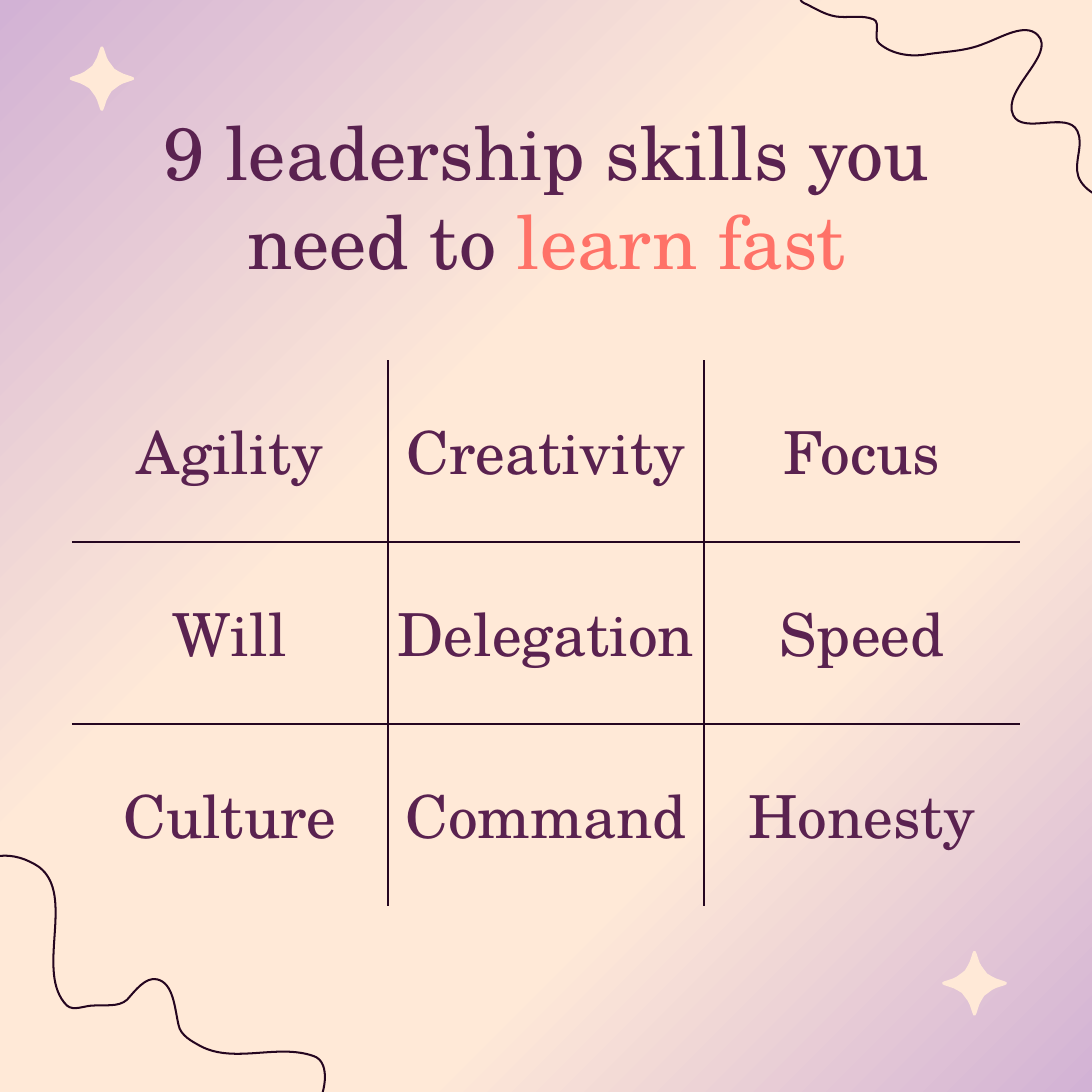
"""Build a square slide with a grid of nine leadership skills."""
from lxml import etree
from pptx import Presentation, util as u
from pptx.dml.color import RGBColor
from pptx.enum import shapes, text
from pptx.oxml import ns

SIDE = 11.25
FONT = "TeX Gyre Schola"
HUES = {"cream": "FFE9D7", "lilac": "D2B2D5", "plum": "5A2250",
        "coral": "FF7268", "ink": "250620"}
FADE = [(0, "lilac"), (31, "cream"), (50, "cream"), (61, "cream"), (100, "lilac")]
TITLE = [("9 leadership skills you need to ", "plum"), ("learn fast", "coral")]
SKILLS = [["Agility", "Creativity", "Focus"],
          ["Will", "Delegation", "Speed"],
          ["Culture", "Command", "Honesty"]]
GRID = {"left": 0.74, "top": 3.71, "width": 9.77, "height": 5.62}
WAVES = [
    [(3.23, 11.46), (3.35, 11.3), (3.42, 10.94), (3.23, 10.88),
     (2.86, 10.75), (2.42, 10.96), (2.07, 10.78),
     (1.98, 10.73), (1.86, 10.67), (1.84, 10.56),
     (1.8, 10.39), (1.79, 10.13), (1.62, 10.09),
     (1.5, 10.06), (1.39, 10.21), (1.31, 10.3),
     (1.22, 10.38), (1.08, 10.35), (0.96, 10.36),
     (0.87, 10.36), (0.76, 10.42), (0.69, 10.36),
     (0.35, 10.02), (0.79, 9.22), (0.4, 8.93),
     (0.28, 8.85), (0.13, 8.8), (-0.01, 8.82),
     (-0.28, 8.88), (-0.43, 9.19), (-0.62, 9.39)],
    [(11.55, 2.07), (11.38, 2.07), (11.17, 1.98), (11.11, 1.82),
     (11.06, 1.67), (11.17, 1.49), (11.1, 1.35),
     (11, 1.14), (10.54, 1.39), (10.44, 1.19),
     (10.31, 0.93), (10.89, 0.56), (10.69, 0.36),
     (10.56, 0.23), (10.31, 0.39), (10.14, 0.45),
     (9.95, 0.53), (9.74, 0.53), (9.55, 0.56),
     (9.38, 0.59), (9.19, 0.56), (9.06, 0.45),
     (8.99, 0.4), (9.08, 0.23), (9, 0.2),
     (8.88, 0.15), (8.73, 0.19), (8.61, 0.17),
     (8.49, 0.15), (8.39, 0.08), (8.28, 0.03),
     (8.21, 0), (8.26, -0.11), (8.26, -0.17)],
]
STARS = [(10.04, 10.13), (1.05, 0.81)]
ARM = [(0.01, 0.33), (0.02, 0.31), (0.05, 0.22), (0.07, 0.18), (0.1, 0.14),
       (0.13, 0.1), (0.18, 0.07), (0.22, 0.05), (0.31, 0.02), (0.33, 0.01)]


def paint(fill, hue):
    fill.solid()
    fill.fore_color.rgb = RGBColor.from_string(HUES[hue])


def node(up, tag, **attrs):
    return etree.SubElement(up, ns.qn(tag), attrs)


def tint(up, hue):
    node(up, "a:srgbClr", val=HUES[hue])


def write(para, words, hue, size):
    para.alignment = text.PP_ALIGN.CENTER
    run = para.add_run()
    run.text = words
    for key, val in {"name": FONT, "size": u.Pt(size), "bold": False}.items():
        setattr(run.font, key, val)
    paint(run.font.fill, hue)


def inset(box, gap):
    for edge in ("left", "right", "top", "bottom"):
        setattr(box, f"margin_{edge}", u.Inches(gap))


def backdrop(slide):
    paint(slide.background.fill, "cream")
    rect = slide.shapes.add_shape(shapes.MSO_SHAPE.RECTANGLE, 0, 0,
                                  u.Inches(SIDE), u.Inches(SIDE))
    rect.shadow.inherit = False
    rect.line.fill.background()
    grad = etree.Element(ns.qn("a:gradFill"), rotWithShape="1")
    stops = node(grad, "a:gsLst")
    for spot, hue in FADE:
        tint(node(stops, "a:gs", pos=str(spot * 1000)), hue)
    node(grad, "a:lin", ang=str(225 * 60000), scaled="0")
    rect.element.spPr.insert(2, grad)


def outline(slide, pts, close):
    pts = [(u.Inches(x), u.Inches(y)) for x, y in pts]
    pen = slide.shapes.build_freeform(*pts[0])
    pen.add_line_segments(pts[1:], close=close)
    form = pen.convert_to_shape()
    form.shadow.inherit = False
    return form


def bend(form):
    legs = list(form.element.iter(ns.qn("a:lnTo")))
    for k in range(0, len(legs), 3):
        curve = etree.Element(ns.qn("a:cubicBezTo"))
        legs[k].addprevious(curve)
        for leg in legs[k:k + 3]:
            curve.append(leg[0])
            leg.getparent().remove(leg)


def star(x, y):
    pts, arm = [], ARM
    for _ in range(4):
        pts += [(x + a, y - b) for a, b in arm]
        arm = [(b, -a) for a, b in arm]
    return pts


def border(cell, row, col):
    last = len(SKILLS) - 1
    inner = {"L": col > 0, "R": col < last, "T": row > 0, "B": row < last}
    props = cell._tc.get_or_add_tcPr()
    for spot, (edge, shown) in enumerate(inner.items()):
        line = etree.Element(ns.qn(f"a:ln{edge}"), w=str(u.Pt(1.5)))
        if shown:
            tint(node(line, "a:solidFill"), "ink")
        else:
            node(line, "a:noFill")
        props.insert(spot, line)


def skills(slide):
    size = len(SKILLS)
    area = map(u.Inches, GRID.values())
    table = slide.shapes.add_table(size, size, *area).table
    table.first_row = table.horz_banding = False
    for r, names in enumerate(SKILLS):
        for c, name in enumerate(names):
            cell = table.cell(r, c)
            cell.fill.background()
            cell.vertical_anchor = text.MSO_ANCHOR.MIDDLE
            inset(cell, 0.1)
            write(cell.text_frame.paragraphs[0], name, "plum", 44)
            border(cell, r, c)


def main():
    deck = Presentation()
    deck.slide_width = deck.slide_height = u.Inches(SIDE)
    slide = deck.slides.add_slide(deck.slide_layouts[6])
    backdrop(slide)
    for knots in WAVES:
        wave = outline(slide, knots, False)
        bend(wave)
        wave.fill.background()
        paint(wave.line.fill, "ink")
        wave.line.width = u.Pt(1.5)
    for spot in STARS:
        shine = outline(slide, star(*spot), True)
        paint(shine.fill, "cream")
        shine.line.fill.background()
    head = slide.shapes.add_textbox(*map(u.Inches, (1.17, 0.96, 8.92, 2.11)))
    head.text_frame.word_wrap = True
    inset(head.text_frame, 0.14)
    for words, hue in TITLE:
        write(head.text_frame.paragraphs[0], words, hue, 55)
    skills(slide)
    deck.save("out.pptx")


if __name__ == "__main__":
    main()
